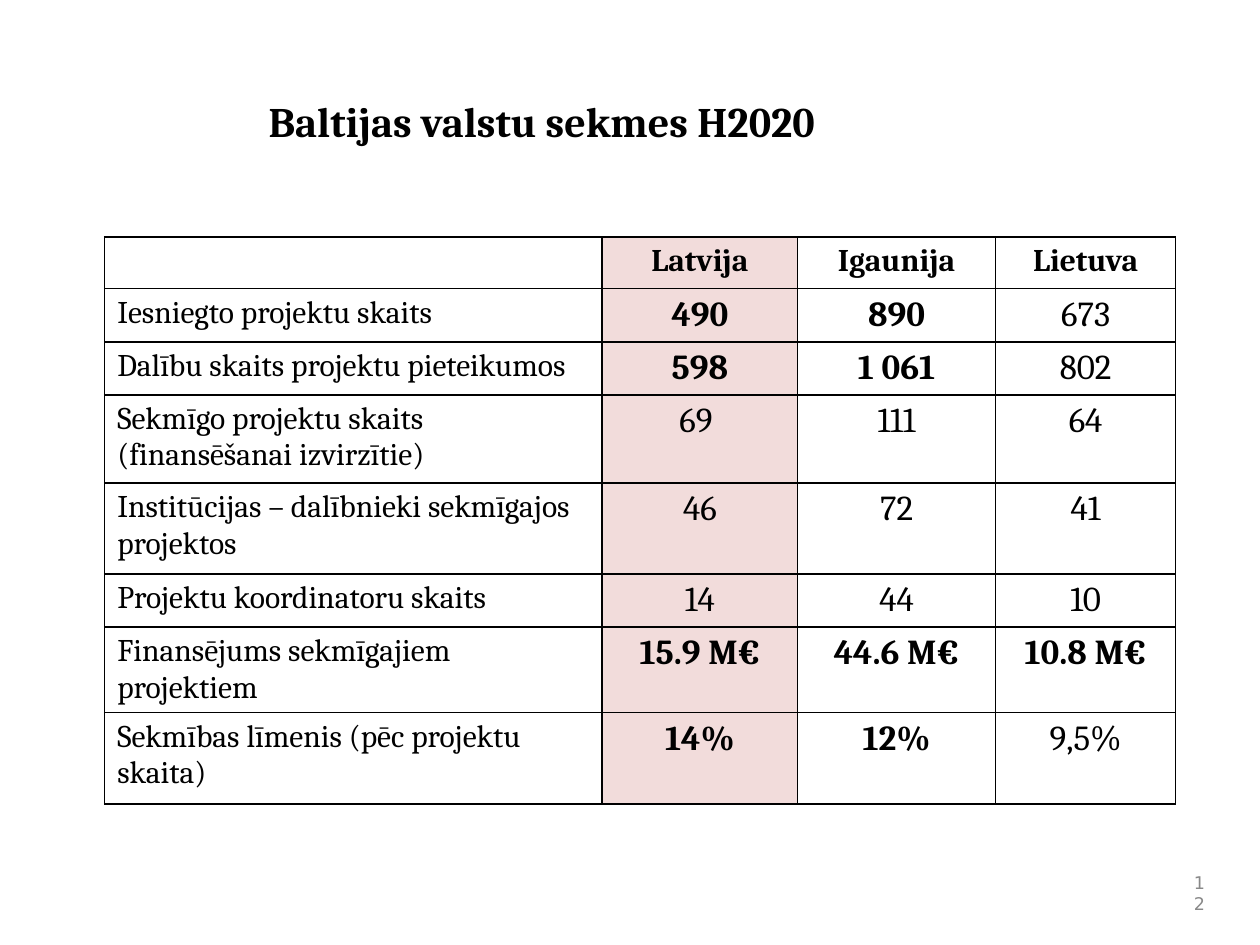
from lxml import etree
from pptx import Presentation
from pptx.dml.color import RGBColor
from pptx.enum import text
from pptx.oxml import parse_xml
from pptx.oxml.ns import nsdecls
from pptx.util import Cm, Pt

BLACK = RGBColor(0x00, 0x00, 0x00)
GREY = RGBColor(0x89, 0x89, 0x89)
PINK = RGBColor(0xF2, 0xDC, 0xDB)

# Row height in cm, label, values per country, number of leading bold values
ROWS = [
    (1.04, "", ("Latvija", "Igaunija", "Lietuva"), 3),
    (1.07, "Iesniegto projektu skaits", ("490", "890", "673"), 2),
    (1.07, "Dalību skaits projektu pieteikumos", ("598", "1 061", "802"), 2),
    (1.78, "Sekmīgo projektu skaits (finansēšanai izvirzītie)", ("69 ", "111", "64"), 0),
    (1.83, "Institūcijas – dalībnieki sekmīgajos projektos", ("46", "72", "41"), 0),
    (1.07, "Projektu koordinatoru skaits", ("14", "44", "10"), 0),
    (1.71, "Finansējums sekmīgajiem projektiem", ("15.9 M€", "44.6 M€", "10.8 M€"), 3),
    (1.85, "Sekmības līmenis (pēc projektu skaita)", ("14%", "12%", "9,5%"), 2),
]
COLUMN_WIDTHS = (10.03, 3.94, 3.99, 3.63)


def style(paragraph, size, color, font="Cambria", bold=False, align=text.PP_ALIGN.LEFT):
    paragraph.alignment = align
    for run in paragraph.runs:
        run.font.name = font
        run.font.size = Pt(size)
        run.font.bold = bold
        run.font.color.rgb = color


def add_borders(cell):
    properties = cell._tc.get_or_add_tcPr()
    for side in ("lnL", "lnR", "lnT", "lnB"):
        properties.append(parse_xml(
            f'<a:{side} {nsdecls("a")} w="{Pt(1)}"><a:solidFill>'
            f'<a:srgbClr val="{BLACK}"/></a:solidFill></a:{side}>'))


prs = Presentation()
prs.slide_width, prs.slide_height = Cm(25.4), Cm(19.05)
slide = prs.slides.add_slide(prs.slide_layouts[5])

# Title
title = slide.shapes.title
title.left, title.top, title.width, title.height = Cm(5.16), Cm(1.8), Cm(16.23), Cm(1.88)
title.text_frame.text = "Baltijas valstu sekmes H2020"
title.text_frame.vertical_anchor = text.MSO_ANCHOR.TOP
style(title.text_frame.paragraphs[0], 24, BLACK, bold=True)

# Results table
results = slide.shapes.add_table(
    len(ROWS), len(COLUMN_WIDTHS), Cm(2.11), Cm(4.78),
    Cm(sum(COLUMN_WIDTHS)), Cm(sum(row[0] for row in ROWS))).table
for column, width in zip(results.columns, COLUMN_WIDTHS):
    column.width = Cm(width)

for r, (height, label, values, bold_count) in enumerate(ROWS):
    results.rows[r].height = Cm(height)
    for c, content in enumerate((label, *values)):
        cell = results.cell(r, c)
        add_borders(cell)
        if c == 1:
            cell.fill.solid()
            cell.fill.fore_color.rgb = PINK
        else:
            cell.fill.background()
        cell.text_frame.text = content
        style(cell.text_frame.paragraphs[0],
              18 if r == 0 or c == 0 else 20, BLACK,
              bold=1 <= c <= bold_count,
              align=text.PP_ALIGN.CENTER if c else text.PP_ALIGN.LEFT)

# Page number
page_number = slide.shapes.add_textbox(Cm(23.7), Cm(17.58), Cm(0.84), Cm(0.84)).text_frame
page_number.word_wrap = True
page_number.vertical_anchor = text.MSO_ANCHOR.MIDDLE
page_number.text = "12"
style(page_number.paragraphs[0], 10, GREY, font="DejaVu Sans", align=text.PP_ALIGN.RIGHT)

prs.save("out.pptx")
